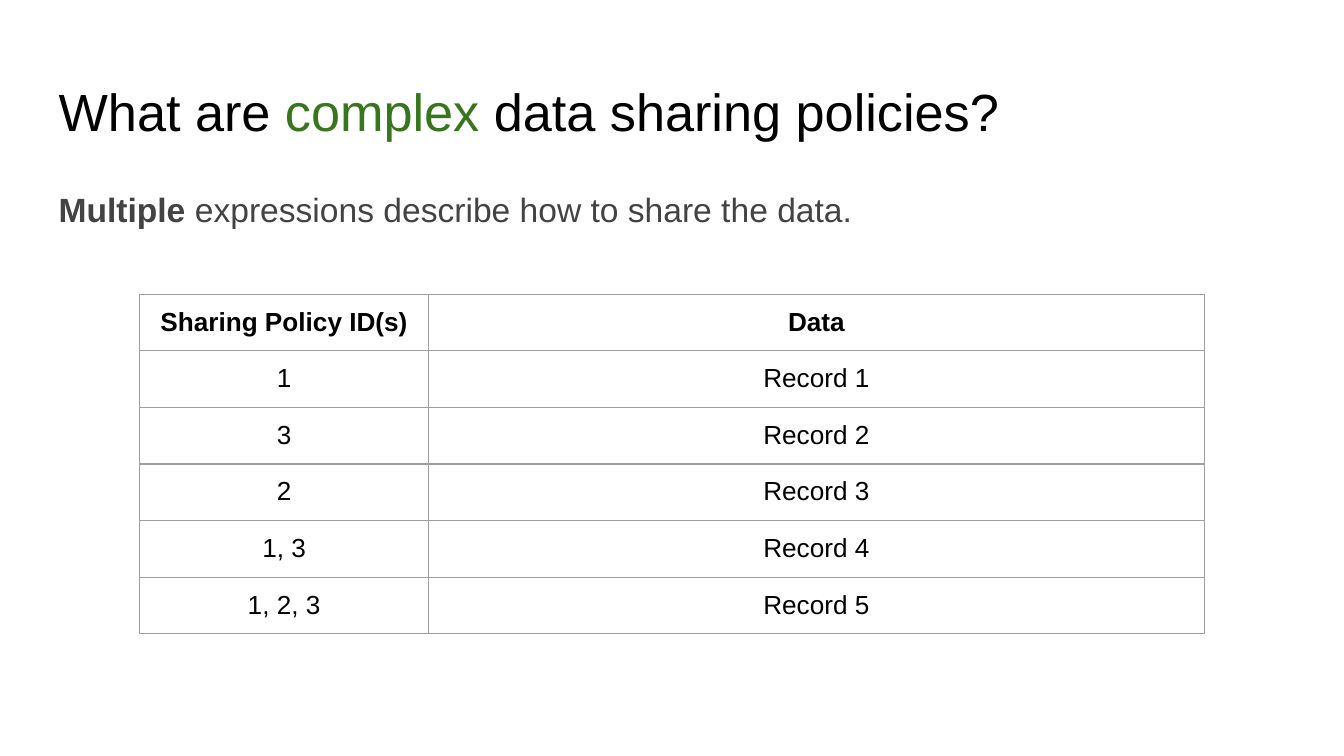
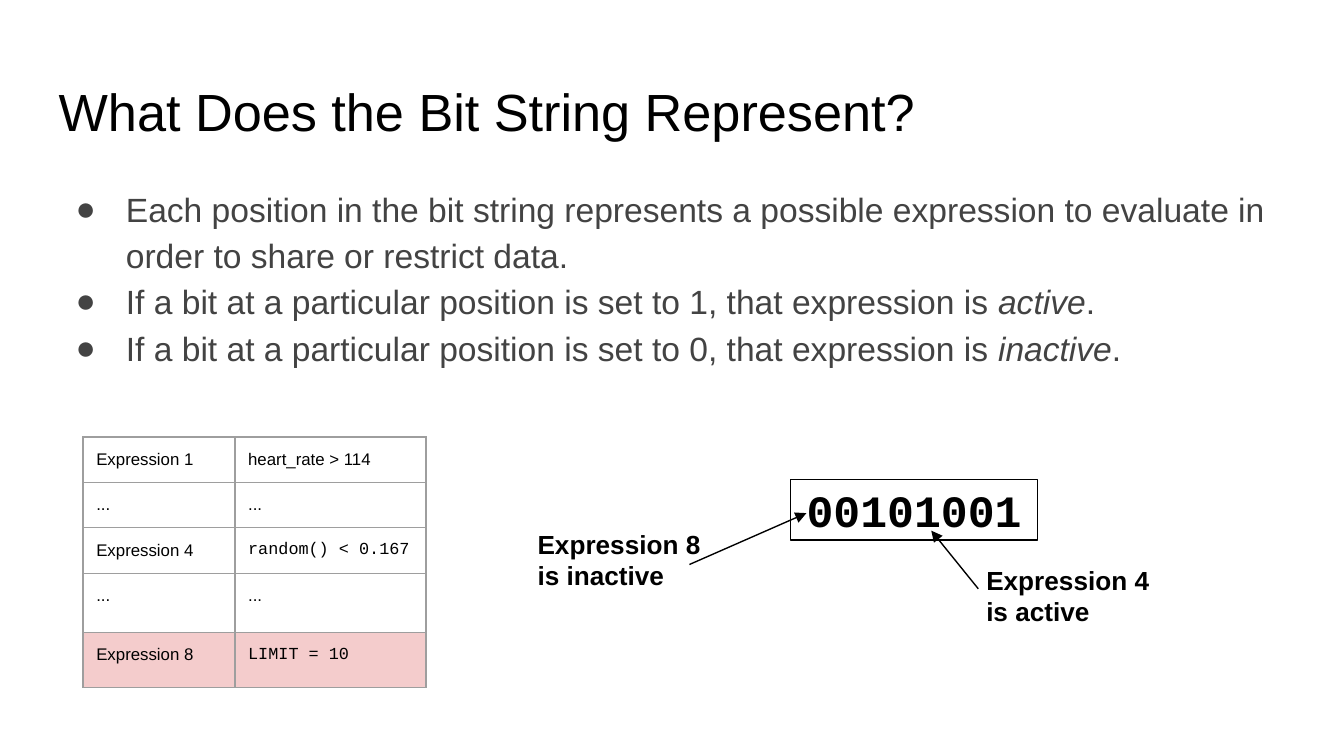
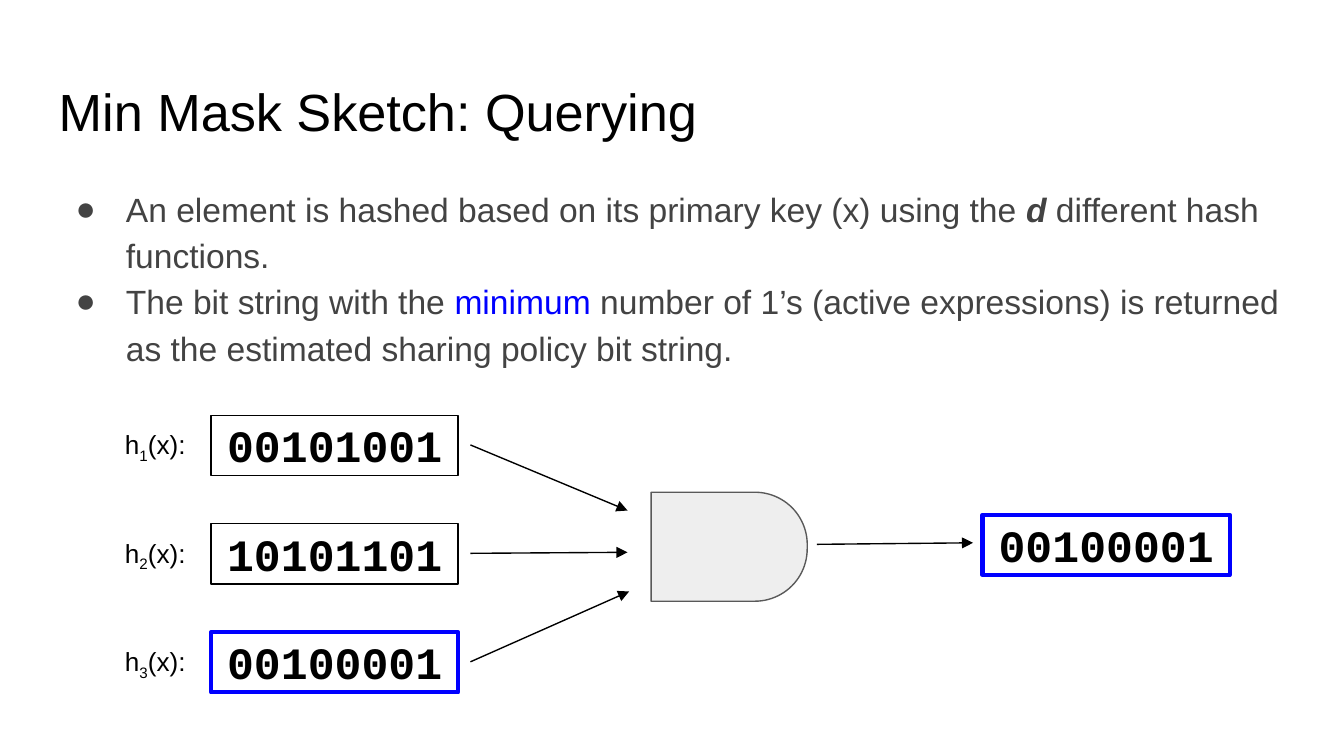
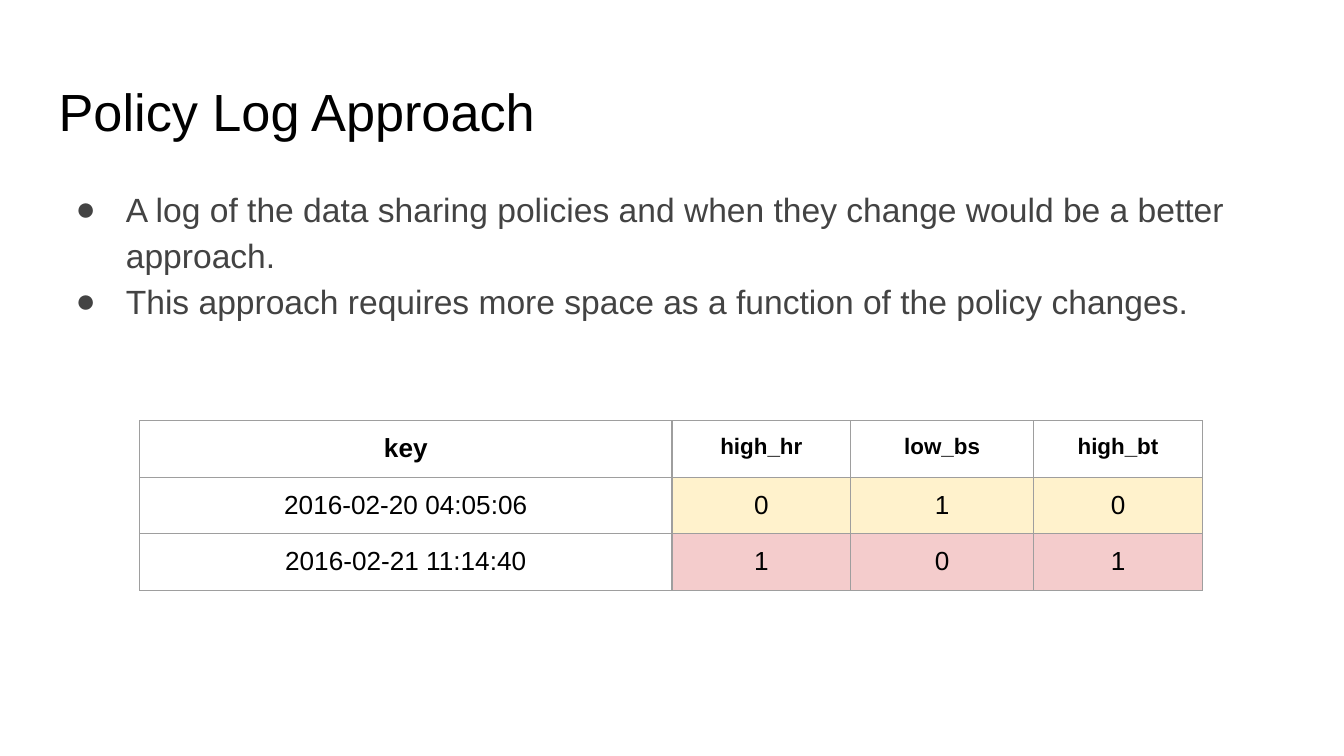
"""Build four slides on data sharing policies and bit strings."""
from lxml import etree
from pptx import Presentation
from pptx import util as u
from pptx.dml.color import RGBColor
from pptx.enum import shapes, text
from pptx.oxml import ns

COLORS = {
    "black": "000000", "body": "434343", "green": "38761D", "blue": "0000FF",
    "border": "9E9E9E", "pink": "F4CCCC", "cream": "FFF2CC",
    "gate": "EEEEEE", "gate_line": "595959",
}
SANS, MONO = "Arial", "Courier New"
MARGIN = u.Cm(0.25)
LEFT, CENTER = text.PP_ALIGN.LEFT, text.PP_ALIGN.CENTER
FRAME_WIDTH, FRAME_HEIGHT = 4.67, 1.14
WIDE_TABLE_LEFT, WIDE_ROW = 2.64, 1.07


def rgb(name):
    return RGBColor.from_string(COLORS[name])


def sub(parent, tag, **attributes):
    return etree.SubElement(parent, ns.qn(tag), attributes)


def style_run(run, size, color="black", font=SANS, bold=False, italic=False, baseline=0):
    run.font.size = u.Pt(size)
    run.font.name = font
    run.font.bold = bold
    run.font.italic = italic
    run.font.color.rgb = rgb(color)
    if baseline:
        run._r.get_or_add_rPr().set("baseline", str(baseline * 1000))


def write(paragraph, parts, align=LEFT, **style):
    """Write a string, or a list of strings and (string, style) pairs."""
    paragraph.alignment = align
    for part in [parts] if isinstance(parts, str) else parts:
        words, extra = (part, {}) if isinstance(part, str) else part
        run = paragraph.add_run()
        run.text = words
        style_run(run, **{**style, **extra})


def prepare_frame(frame):
    frame.word_wrap = True
    frame.auto_size = text.MSO_AUTO_SIZE.NONE
    frame.vertical_anchor = text.MSO_ANCHOR.TOP
    frame.margin_left = frame.margin_right = MARGIN
    frame.margin_top = frame.margin_bottom = MARGIN
    return frame


def add_text(slide, left, top, width, height, parts, **style):
    box = slide.shapes.add_textbox(u.Cm(left), u.Cm(top), u.Cm(width), u.Cm(height))
    frame = prepare_frame(box.text_frame)
    write(frame.paragraphs[0], parts, **style)
    return frame


def add_titled_slide(presentation, title_parts):
    slide = presentation.slides.add_slide(presentation.slide_layouts[5])
    title = slide.shapes.title
    title.left, title.top = u.Cm(0.86), u.Cm(1.24)
    title.width, title.height = u.Cm(23.67), u.Cm(1.6)
    write(prepare_frame(title.text_frame).paragraphs[0], title_parts, size=28)
    return slide


def add_body(slide, height, first, *others, bullets=True):
    frame = add_text(slide, 0.86, 3.2, 23.67, height, first, size=18, color="body")
    for parts in others:
        write(frame.add_paragraph(), parts, size=18, color="body")
    for paragraph in frame.paragraphs:
        paragraph.line_spacing = 1.15
        if bullets:
            add_bullet(paragraph)
        else:
            paragraph.space_after = u.Pt(16)


def add_bullet(paragraph):
    properties = paragraph._p.get_or_add_pPr()
    properties.set("marL", str(u.Cm(1.27)))
    properties.set("indent", str(-u.Cm(0.95)))
    sub(sub(properties, "a:buClr"), "a:srgbClr", val=COLORS["body"])
    sub(properties, "a:buFont", typeface=SANS)
    sub(properties, "a:buChar", char="●")


def add_borders(cell):
    properties = cell._tc.get_or_add_tcPr()
    for index, side in enumerate(("a:lnL", "a:lnR", "a:lnT", "a:lnB")):
        line = sub(properties, side, w=str(u.Pt(0.75)))
        sub(sub(line, "a:solidFill"), "a:srgbClr", val=COLORS["border"])
        properties.insert(index, line)


def add_grid(slide, left, top, widths, heights, rows, size=14, align=CENTER,
             header=True, styles=None, fills=None):
    """Add a bordered table; styles and fills are keyed by (row, column)."""
    styles, fills = styles or {}, fills or {}
    graphic = slide.shapes.add_table(
        len(rows), len(widths), u.Cm(left), u.Cm(top), u.Cm(sum(widths)), u.Cm(sum(heights)))
    table = graphic.table
    table.first_row = table.horz_banding = False
    for column, width in zip(table.columns, widths):
        column.width = u.Cm(width)
    for row, height in zip(table.rows, heights):
        row.height = u.Cm(height)
    for row_index, values in enumerate(rows):
        for column_index, value in enumerate(values):
            place = row_index, column_index
            cell = table.cell(*place)
            cell.margin_left = cell.margin_right = MARGIN
            cell.margin_top = cell.margin_bottom = MARGIN
            style = {"size": size, "bold": header and row_index == 0, **styles.get(place, {})}
            write(cell.text_frame.paragraphs[0], value, align, **style)
            if place in fills:
                cell.fill.solid()
                cell.fill.fore_color.rgb = rgb(fills[place])
            else:
                cell.fill.background()
            add_borders(cell)


def add_outline(slide, kind, left, top, width, height, line, weight=0.75, fill=None):
    shape = slide.shapes.add_shape(kind, u.Cm(left), u.Cm(top), u.Cm(width), u.Cm(height))
    shape.shadow.inherit = False
    shape.line.color.rgb = rgb(line)
    shape.line.width = u.Pt(weight)
    if fill:
        shape.fill.solid()
        shape.fill.fore_color.rgb = rgb(fill)
    else:
        shape.fill.background()
    return shape


def add_bit_string(slide, left, top, bits, selected=False):
    add_text(slide, left - 0.48, top - 0.2, FRAME_WIDTH + 0.96, FRAME_HEIGHT, bits,
             align=CENTER, size=24, font=MONO, bold=True)
    line, weight = ("blue", 2.25) if selected else ("black", 0.75)
    add_outline(slide, shapes.MSO_SHAPE.RECTANGLE, left, top, FRAME_WIDTH, FRAME_HEIGHT,
                line, weight)


def add_arrow(slide, start, end):
    arrow = slide.shapes.add_connector(
        shapes.MSO_CONNECTOR.STRAIGHT, *(u.Cm(value) for value in (*start, *end)))
    arrow.line.color.rgb = rgb("black")
    arrow.line.width = u.Pt(0.75)
    sub(arrow.line._get_or_add_ln(), "a:tailEnd", type="triangle")
    sub(arrow._element.spPr, "a:effectLst")


def build_complex_policies(presentation):
    slide = add_titled_slide(
        presentation, ["What are ", ("complex", {"color": "green"}), " data sharing policies?"])
    add_body(slide, 1.6, [("Multiple", {"bold": True}),
                          " expressions describe how to share the data."], bullets=False)
    policies = ("1", "3", "2", "1, 3", "1, 2, 3")
    rows = [("Sharing Policy ID(s)", "Data")]
    rows += [(policy, f"Record {number}") for number, policy in enumerate(policies, 1)]
    add_grid(slide, WIDE_TABLE_LEFT, 5.56, (5.46, 14.66), [WIDE_ROW] * len(rows), rows)


def build_bit_string_meaning(presentation):
    slide = add_titled_slide(presentation, "What Does the Bit String Represent?")
    settings = [
        [f"If a bit at a particular position is set to {bit}, that expression is ",
         (state, {"italic": True}), "."]
        for bit, state in ((1, "active"), (0, "inactive"))]
    add_body(slide, 5.84, "Each position in the bit string represents a possible expression "
             "to evaluate in order to share or restrict data.", *settings)
    rows = [("Expression 1", "heart_rate > 114"), ("...", "..."),
            ("Expression 4", "random() < 0.167"), ("...", "..."),
            ("Expression 8", "LIMIT = 10")]
    add_grid(slide, 1.57, 8.26, (2.87, 3.61), (0.71, 0.71, 0.71, 1.12, 1.04), rows,
             size=9, align=LEFT, header=False,
             styles={(row, 1): {"font": MONO} for row in (2, 4)},
             fills={(4, column): "pink" for column in (0, 1)})
    add_bit_string(slide, 14.94, 9.07, "00101001")
    callouts = [
        ("Expression 4 is active", 18.39, 10.41, (18.49, 11.13), (17.6, 10.03)),
        ("Expression 8 is inactive", 9.91, 9.73, (13.03, 10.67), (15.24, 9.7))]
    for label, left, top, start, end in callouts:
        add_arrow(slide, start, end)
        add_text(slide, left, top, 3.71, 1.6, label, size=14, bold=True)


def build_querying(presentation):
    slide = add_titled_slide(presentation, "Min Mask Sketch: Querying")
    add_body(slide, 4.06,
             ["An element is hashed based on its primary key (x) using the ",
              ("d", {"bold": True, "italic": True}), " different hash functions."],
             ["The bit string with the ", ("minimum", {"color": "blue"}),
              " number of 1’s (active expressions) is returned as the estimated "
              "sharing policy bit string."])
    minimum = "00100001"
    hashes = [("00101001", (11.86, 9.65)), ("10101101", (11.86, 10.44)),
              (minimum, (11.89, 11.18))]
    for index, (bits, gate_input) in enumerate(hashes):
        top = 7.85 + 2.05 * index
        add_bit_string(slide, 3.99, top, bits, selected=bits == minimum)
        add_text(slide, 2.11, top, 1.88, FRAME_HEIGHT,
                 ["h", (str(index + 1), {"baseline": -25}), "(x):"], size=14)
        add_arrow(slide, (8.89, top + 0.56), gate_input)
    add_bit_string(slide, 18.57, 9.73, minimum, selected=True)
    gate = add_outline(slide, shapes.MSO_SHAPE.ROUND_2_SAME_RECTANGLE,
                       12.75, 8.86, 2.06, 2.95, "gate_line", fill="gate")
    gate.rotation = 90
    gate.adjustments[0], gate.adjustments[1] = 0.48, 0
    add_arrow(slide, (15.44, 10.29), (18.39, 10.26))


def build_policy_log(presentation):
    slide = add_titled_slide(presentation, "Policy Log Approach")
    add_body(slide, 3.1,
             "A log of the data sharing policies and when they change would be a better approach.",
             "This approach requires more space as a function of the policy changes.")
    rows = [("key", "high_hr", "low_bs", "high_bt"),
            ("2016-02-20 04:05:06", "0", "1", "0"),
            ("2016-02-21 11:14:40", "1", "0", "1")]
    flags = range(1, 4)
    add_grid(slide, WIDE_TABLE_LEFT, 7.95, (10.06, 3.38, 3.45, 3.2), [WIDE_ROW] * len(rows), rows,
             styles={(0, column): {"size": 12} for column in flags},
             fills={(row, column): color for row, color in ((1, "cream"), (2, "pink"))
                    for column in flags})


def main():
    presentation = Presentation()
    presentation.slide_width, presentation.slide_height = u.Cm(25.4), u.Cm(14.29)
    build_complex_policies(presentation)
    build_bit_string_meaning(presentation)
    build_querying(presentation)
    build_policy_log(presentation)
    presentation.save("out.pptx")


if __name__ == "__main__":
    main()
